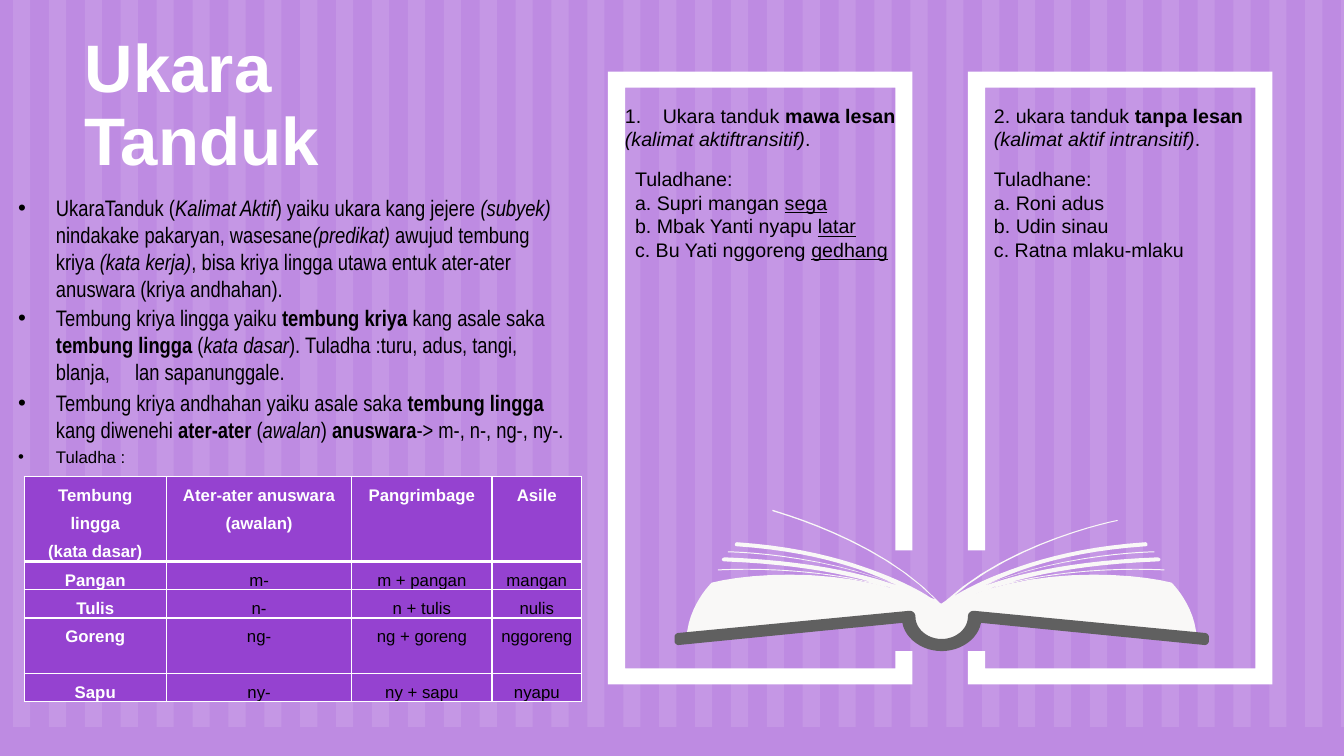
import pptx
import pptx.util
import pptx.dml.color
import pptx.enum.text
import pptx.oxml
import pptx.oxml.ns
from pptx.util import Inches

RGBColor = pptx.dml.color.RGBColor
LILAC = RGBColor(0xBE, 0x8B, 0xE2)
PURPLE = RGBColor(0x95, 0x42, 0xD0)
WHITE = RGBColor(0xFF, 0xFF, 0xFF)
BLACK = RGBColor(0, 0, 0)
PAPER = RGBColor(0xF9, 0xF8, 0xF7)
COVER = RGBColor(0x60, 0x60, 0x60)
ALIGN = pptx.enum.text.PP_ALIGN
ANCHOR = pptx.enum.text.MSO_ANCHOR
NO_FIT = pptx.enum.text.MSO_AUTO_SIZE.NONE
NS = pptx.oxml.ns.nsdecls("a")


def trace(steps):
    """Turn line steps (x, y) and cubic steps (six numbers) into points."""
    points = [steps[0]]
    for step in steps[1:]:
        if len(step) == 2:
            points.append(step)
            continue
        nodes = [points[-1], step[:2], step[2:4], step[4:]]
        for k in range(1, 13):
            t = k / 12
            weights = ((1 - t) ** 3, 3 * t * (1 - t) ** 2, 3 * t * t * (1 - t), t ** 3)
            points.append(tuple(sum(w * node[axis] for w, node in zip(weights, nodes))
                                for axis in (0, 1)))
    return points


def mirror(points, axis):
    return [(2 * axis - x, y) for x, y in reversed(points)]


class Lesson:
    font = "Arial"

    def __init__(self, deck):
        self.slide = deck.slides.add_slide(deck.slide_layouts[3])
        self.slide.background.fill.solid()
        self.slide.background.fill.fore_color.rgb = LILAC

    def outline(self, contours, color):
        builder = None
        for contour in contours:
            points = [(Inches(x), Inches(y)) for x, y in contour]
            if builder is None:
                builder = self.slide.shapes.build_freeform(*points[0], scale=1.0)
            else:
                builder.move_to(*points[0])
            builder.add_line_segments(points[1:], close=True)
        shape = builder.convert_to_shape()
        shape.shadow.inherit = False
        shape.fill.solid()
        shape.fill.fore_color.rgb = color
        shape.line.fill.background()
        return shape

    def add_runs(self, paragraph, runs, size, color=BLACK, font=None):
        for text, style in runs:
            run = paragraph.add_run()
            run.text = text
            run.font.name = font or self.font
            run.font.size = pptx.util.Pt(size)
            run.font.color.rgb = color
            run.font.bold = "b" in style
            run.font.italic = "i" in style
            run.font.underline = "u" in style

    def fill_frame(self, shape, box, paragraphs, size, color=BLACK, font=None):
        shape.left, shape.top, shape.width, shape.height = map(Inches, box)
        frame = shape.text_frame
        frame.word_wrap = True
        frame.auto_size = NO_FIT
        for i, runs in enumerate(paragraphs):
            paragraph = frame.add_paragraph() if i else frame.paragraphs[0]
            self.add_runs(paragraph, runs, size, color, font)
        return frame

    def note(self, box, paragraphs):
        shape = self.slide.shapes.add_textbox(0, 0, 0, 0)
        return self.fill_frame(shape, box, paragraphs, 14)

    def border(self, cell, bottom):
        properties = cell._tc.get_or_add_tcPr()
        widths = {"lnL": 1, "lnR": 1, "lnT": 1, "lnB": bottom}
        for i, (side, points) in enumerate(widths.items()):
            properties.insert(i, pptx.oxml.parse_xml(
                f'<a:{side} {NS} w="{points * 12700}"><a:solidFill>'
                f'<a:srgbClr val="{WHITE}"/></a:solidFill></a:{side}>'))

    def table(self, box, widths, heights, rows):
        grid = self.slide.shapes.add_table(len(rows), len(widths), *map(Inches, box)).table
        for column, width in zip(grid.columns, widths):
            column.width = Inches(width)
        for row, height in zip(grid.rows, heights):
            row.height = Inches(height)
        for r, row in enumerate(rows):
            for c, text in enumerate(row):
                cell = grid.cell(r, c)
                cell.margin_left = cell.margin_right = Inches(0.07)
                cell.margin_top = cell.margin_bottom = 0
                cell.fill.solid()
                cell.fill.fore_color.rgb = PURPLE
                heading = r == 0 or c == 0
                for i, line in enumerate(text.split("\n")):
                    frame = cell.text_frame
                    paragraph = frame.add_paragraph() if i else frame.paragraphs[0]
                    paragraph.alignment = ALIGN.CENTER
                    paragraph.line_spacing = 1.5
                    self.add_runs(paragraph, [(line, "b" if heading else "")], 12,
                                  WHITE if heading else BLACK)
                self.border(cell, 3 if r == 0 else 1)


def main():
    deck = pptx.Presentation()
    deck.slide_width, deck.slide_height = Inches(13.33), Inches(7.5)
    lesson = Lesson(deck)
    title, verb_list, root_list = lesson.slide.placeholders

    # Striped backdrop, placed behind the placeholders
    lefts = [0.13 + 0.356 * i for i in range(38)]
    stripes = lesson.outline(
        [[(x, 0), (min(x + 0.17, 13.33), 0), (min(x + 0.17, 13.33), 7.21), (x, 7.21)]
         for x in lefts], WHITE)
    tint = stripes._element.spPr.find(".//" + pptx.oxml.ns.qn("a:srgbClr"))
    tint.append(pptx.oxml.parse_xml(f'<a:alpha {NS} val="11000"/>'))
    lesson.slide.shapes._spTree.insert(2, stripes._element)

    # Two facing frames
    frame = [(6.03, 0.71), (9.05, 0.71), (9.05, 5.46), (8.88, 5.46), (8.88, 0.87),
             (6.2, 0.87), (6.2, 6.63), (8.88, 6.63), (8.88, 6.46), (9.05, 6.46),
             (9.05, 6.79), (6.03, 6.79)]
    lesson.outline([frame], WHITE)
    lesson.outline([mirror(frame, 9.325)], WHITE)

    # Title and definitions
    heading = lesson.fill_frame(title, (0.74, 0.01, 4.44, 2.11),
                                [[("Ukara Tanduk", "b")]], 48, WHITE)
    heading.vertical_anchor = ANCHOR.MIDDLE
    heading.paragraphs[0].alignment = ALIGN.LEFT
    heading.paragraphs[0].line_spacing = 0.9
    lesson.fill_frame(verb_list, (0.08, 1.88, 5.64, 0.97), [[
        ("UkaraTanduk (", ""), ("Kalimat Aktif", "i"), (") yaiku ukara kang jejere ", ""),
        ("(subyek) ", "i"), ("nindakake pakaryan, wasesane", ""), ("(predikat) ", "i"),
        ("awujud tembung kriya ", ""), ("(kata kerja)", "i"),
        (", bisa kriya lingga utawa entuk ater-ater anuswara (kriya andhahan).", "")]],
        16, font="Arial Narrow")
    roots = lesson.fill_frame(root_list, (0.08, 2.97, 5.69, 1.02), [
        [("Tembung kriya lingga yaiku ", ""), ("tembung kriya ", "b"),
         ("kang asale saka ", ""), ("tembung lingga", "b"), (" (", ""),
         ("kata dasar", "i"),
         ("). Tuladha :turu, adus, tangi, blanja,\tlan sapanunggale.", "")],
        [("Tembung kriya andhahan yaiku asale saka ", ""), ("tembung lingga ", "b"),
         ("kang diwenehi ", ""), ("ater-ater", "b"), (" (", ""), ("awalan", "i"),
         (") ", ""), ("anuswara", "b"), ("-> m-, n-, ng-, ny-.", "")]],
        16, font="Arial Narrow")
    roots.paragraphs[0]._p.get_or_add_pPr().append(pptx.oxml.parse_xml(
        f'<a:tabLst {NS}><a:tab pos="{Inches(1.16)}" algn="l"/></a:tabLst>'))
    lesson.add_runs(roots.add_paragraph(), [("Tuladha :", "")], 12)

    # Sentences with an object
    transitive = lesson.note((6.1, 0.98, 3.7, 0.57), [
        [("Ukara tanduk ", ""), ("mawa lesan", "b")],
        [("(kalimat aktiftransitif)", "i"), (".", "")]])
    numbered = transitive.paragraphs[0]._p.get_or_add_pPr()
    numbered.set("marL", str(Inches(0.375)))
    numbered.set("indent", str(-Inches(0.375)))
    numbered.append(pptx.oxml.parse_xml(f'<a:buAutoNum {NS} type="arabicPeriod"/>'))
    lesson.note((6.2, 1.61, 2.84, 1.04), [
        [("Tuladhane:", "")],
        [("a. Supri mangan ", ""), ("sega", "u")],
        [("b. Mbak Yanti nyapu ", ""), ("latar", "u")],
        [("c. Bu Yati nggoreng ", ""), ("gedhang", "u")]])

    # Sentences without an object
    lesson.note((9.76, 0.98, 3.28, 0.57), [
        [("2. ukara tanduk ", ""), ("tanpa lesan ", "b"),
         ("(kalimat aktif intransitif)", "i"), (".", "")]])
    lesson.note((9.76, 1.61, 2.12, 1.04), [
        [(line, "")] for line in
        ("Tuladhane:", "a. Roni adus", "b. Udin sinau", "c. Ratna mlaku-mlaku")])

    # Open book: pages and cover, each from its right half
    pages = trace([(9.34, 6.38), (9.52, 6.38, 9.67, 6.25, 9.67, 6.1), (11.87, 6.34),
                   (11.86, 6.01, 11.62, 5.78, 11.62, 5.78),
                   (11.22, 5.68, 10.17, 5.6, 9.34, 6.03)])
    cover = trace([(9.34, 6.46), (9.53, 6.46, 9.7, 6.34, 9.73, 6.18), (11.95, 6.4),
                   (11.97, 6.4, 11.99, 6.38, 11.99, 6.36), (11.99, 6.32),
                   (11.99, 6.3, 11.97, 6.28, 11.95, 6.28), (9.66, 6.06),
                   (9.63, 6.06, 9.6, 6.08, 9.6, 6.12), (9.6, 6.24, 9.48, 6.34, 9.34, 6.34)])
    for half, color in ((pages, PAPER), (cover, COVER)):
        lesson.outline([half + mirror(half, 9.34)], color)

    # Loose leaves: shared strands, a different top leaf on each side
    strands = [(11.55, 5.65), (11.54, 5.65, 10.63, 5.59, 9.83, 5.83), (9.85, 5.83),
               (10.17, 5.72, 10.7, 5.6, 11.48, 5.57), (11.5, 5.57, 11.51, 5.56, 11.51, 5.55),
               (11.51, 5.54, 11.49, 5.53, 11.48, 5.53), (10.69, 5.56, 10.15, 5.68, 9.83, 5.79),
               (9.73, 5.82), (10.55, 5.49, 11.44, 5.48, 11.45, 5.48), (11.45, 5.47),
               (11.44, 5.47, 10.58, 5.48, 9.78, 5.8), (9.87, 5.76),
               (10.19, 5.62, 10.64, 5.47, 11.36, 5.42), (11.38, 5.42, 11.38, 5.41, 11.38, 5.4),
               (11.38, 5.39, 11.37, 5.38, 11.36, 5.38), (10.63, 5.43, 10.17, 5.59, 9.85, 5.72),
               (9.66, 5.8, 9.53, 5.87, 9.44, 5.93)]
    spine = [(9.32, 6), (9.33, 6.02), (9.32, 6.03), (9.35, 6.06),
             (9.35, 6.06, 9.46, 5.98, 9.71, 5.88), (10.53, 5.59, 11.54, 5.66, 11.55, 5.66)]
    right_leaf = [(10.08, 5.37, 11.07, 5.17, 11.08, 5.17), (11.09, 5.16), (11.08, 5.16),
                  (11.07, 5.16, 10.02, 5.37, 9.38, 5.96)]
    left_leaf = [(9.39, 5.95), (9.99, 5.34, 11, 5.08, 11.01, 5.07), (11.01, 5.06), (11, 5.06),
                 (10.99, 5.07, 9.94, 5.34, 9.35, 5.98)]
    lesson.outline([trace(strands + right_leaf + spine)], PAPER)
    lesson.outline([mirror(trace(strands + left_leaf + spine), 9.335)], PAPER)

    # Prefix table
    lesson.table((0.24, 4.73, 5.53, 2.17), (1.41, 1.84, 1.39, 0.89),
                 (0.84, 0.26, 0.26, 0.55, 0.26), [
        ("Tembung lingga\n(kata dasar)", "Ater-ater anuswara (awalan)", "Pangrimbage", "Asile"),
        ("Pangan", "m-", "m + pangan", "mangan"),
        ("Tulis", "n-", "n + tulis", "nulis"),
        ("Goreng", "ng-", "ng + goreng", "nggoreng"),
        ("Sapu", "ny-", "ny + sapu", "nyapu")])
    deck.save("out.pptx")


if __name__ == "__main__":
    main()
